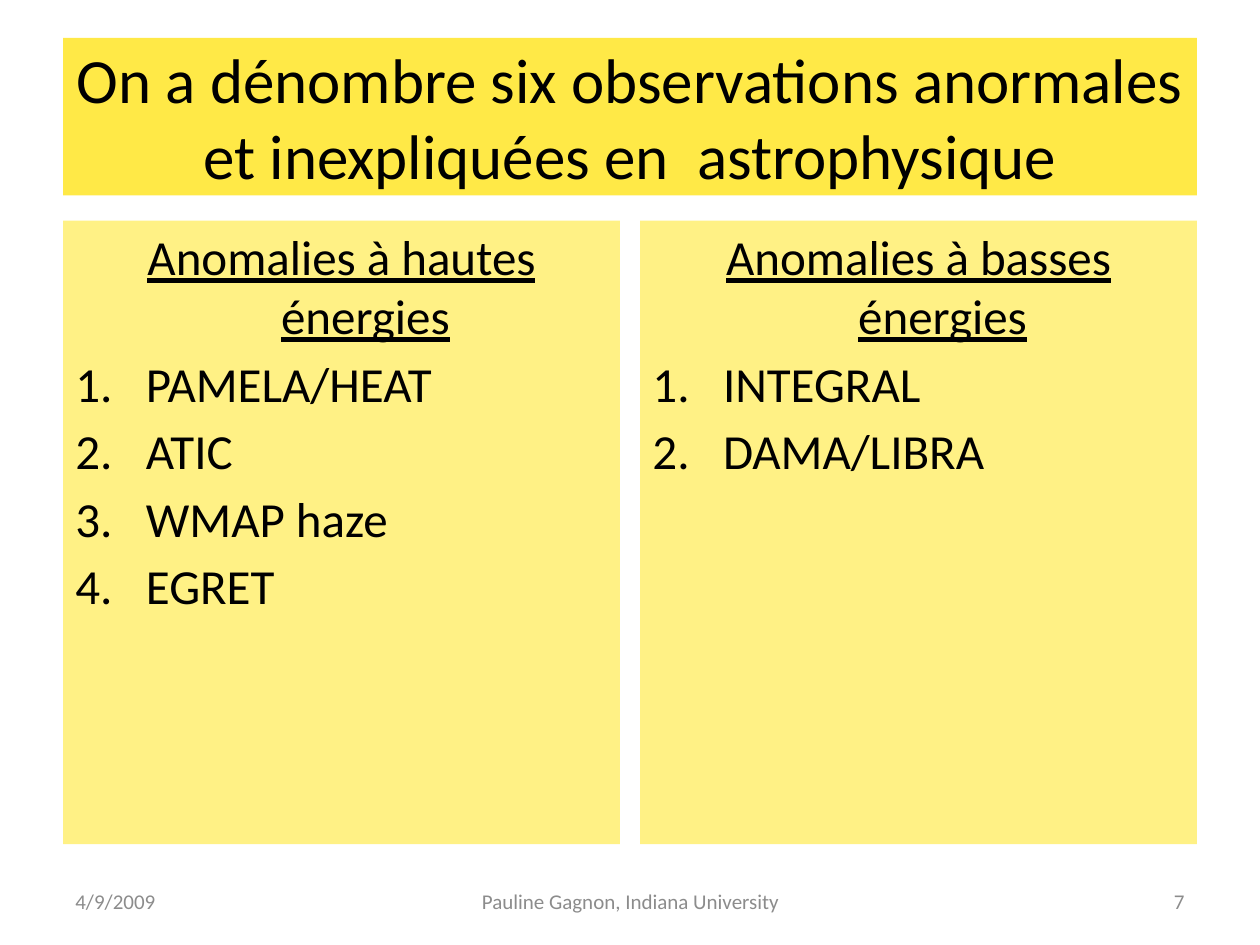
from lxml.etree import SubElement
from pptx import Presentation
from pptx.dml.color import RGBColor
from pptx.enum.shapes import MSO_SHAPE
from pptx.enum.text import MSO_ANCHOR, MSO_AUTO_SIZE, PP_ALIGN
from pptx.oxml.ns import qn
from pptx.util import Inches, Pt

FONT = "Calibri"
COLORS = {
    "title": "FFE947",
    "panel": "FFF185",
    "text": "000000",
    "footer": "8C8C8C",
}
LEFT, WIDTH, GAP = 0.5, 9, 0.16
PANEL = (WIDTH - GAP) / 2

LISTS = [
    ("Anomalies à hautes énergies", ["PAMELA/HEAT", "ATIC", "WMAP haze", "EGRET"]),
    ("Anomalies à basses énergies", ["INTEGRAL", "DAMA/LIBRA"]),
]
FOOTERS = [
    (0.5, 2.33, "4/9/2009", PP_ALIGN.LEFT),
    (3.42, 3.17, "Pauline Gagnon, Indiana University", PP_ALIGN.CENTER),
    (7.17, 2.33, "7", PP_ALIGN.RIGHT),
]


def paint(shape, color):
    shape.fill.solid()
    shape.fill.fore_color.rgb = RGBColor.from_string(COLORS[color])
    shape.line.fill.background()


def style(para, size, color="text", align=PP_ALIGN.LEFT):
    para.alignment = align
    for run in para.runs:
        run.font.name = FONT
        run.font.size = Pt(size)
        run.font.color.rgb = RGBColor.from_string(COLORS[color])


def hang(para, indent, numbered=False):
    """Give a paragraph a hanging indent and, if asked, a number."""
    props = para._p.get_or_add_pPr()
    props.set("marL", str(Inches(indent)))
    props.set("indent", str(-Inches(indent)))
    if numbered:
        SubElement(props, qn("a:buFont"), typeface="+mj-lt")
        SubElement(props, qn("a:buAutoNum"), type="arabicPeriod")
    else:
        SubElement(props, qn("a:buNone"))


def add_title(slide, text):
    title = slide.shapes.title
    title.left, title.top = Inches(LEFT), Inches(0.3)
    title.width, title.height = Inches(WIDTH), Inches(1.25)
    paint(title, "title")
    frame = title.text_frame
    frame.text = text
    frame.auto_size = MSO_AUTO_SIZE.NONE
    frame.vertical_anchor = MSO_ANCHOR.MIDDLE
    style(frame.paragraphs[0], 36, align=PP_ALIGN.CENTER)


def add_panel(slide, left, heading, items):
    panel = slide.shapes.add_shape(
        MSO_SHAPE.RECTANGLE, Inches(left), Inches(1.75), Inches(PANEL), Inches(4.95)
    )
    panel.shadow.inherit = False
    paint(panel, "panel")
    frame = panel.text_frame
    frame.word_wrap = True
    frame.vertical_anchor = MSO_ANCHOR.TOP

    # Underlined heading
    head = frame.paragraphs[0]
    head.text = heading
    head.space_before = Pt(5)
    style(head, 28, align=PP_ALIGN.CENTER)
    head.runs[0].font.underline = True
    hang(head, 0.38)

    # Numbered list
    for item in items:
        para = frame.add_paragraph()
        para.text = item
        para.space_before = Pt(5)
        style(para, 28)
        hang(para, 0.56, numbered=True)


def add_footer(slide, left, width, text, align):
    box = slide.shapes.add_textbox(
        Inches(left), Inches(6.95), Inches(width), Inches(0.4)
    )
    frame = box.text_frame
    frame.word_wrap = True
    frame.vertical_anchor = MSO_ANCHOR.MIDDLE
    frame.text = text
    style(frame.paragraphs[0], 12, "footer", align)


def main():
    deck = Presentation()
    deck.slide_width, deck.slide_height = Inches(10), Inches(7.5)
    slide = deck.slides.add_slide(deck.slide_layouts[5])

    add_title(
        slide,
        "On a dénombre six observations anormales et inexpliquées en  astrophysique",
    )
    # Two equal panels side by side
    for col, (heading, items) in enumerate(LISTS):
        add_panel(slide, LEFT + col * (PANEL + GAP), heading, items)
    # Date, author and page number
    for footer in FOOTERS:
        add_footer(slide, *footer)

    deck.save("out.pptx")


if __name__ == "__main__":
    main()
